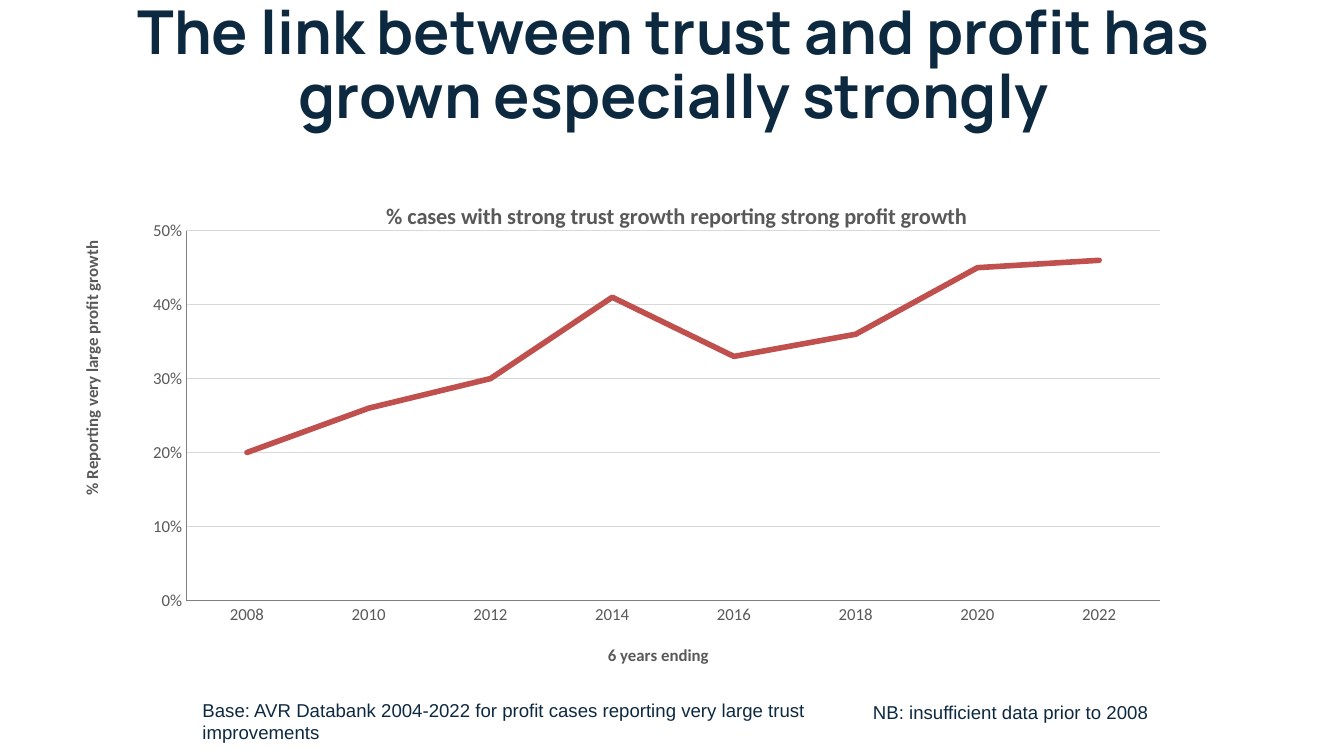
from lxml import etree
from pptx import Presentation
from pptx.chart.data import CategoryChartData
from pptx.dml.color import RGBColor
from pptx.enum.chart import XL_CHART_TYPE, XL_MARKER_STYLE, XL_TICK_MARK
from pptx.enum.text import MSO_ANCHOR, PP_ALIGN
from pptx.oxml.ns import qn
from pptx.util import Inches, Pt

NAVY = RGBColor(0x0D, 0x29, 0x40)
GREY = RGBColor(0x59, 0x59, 0x59)
AXIS_GREY = RGBColor(0x80, 0x80, 0x80)
GRID_GREY = RGBColor(0xD9, 0xD9, 0xD9)
RED = RGBColor(0xC0, 0x50, 0x4D)

CHART_TITLE = "% cases with strong trust growth reporting strong profit growth"
YEARS = [str(year) for year in range(2008, 2023, 2)]
SHARES = [0.2, 0.26, 0.3, 0.41, 0.33, 0.36, 0.45, 0.46]


def style_font(font, size, color, name="Calibri", bold=False):
    font.size = Pt(size)
    font.color.rgb = color
    font.name = name
    font.bold = bold


def add_text(slide, box, text, size, name="Arial", bold=False):
    frame = slide.shapes.add_textbox(*map(Inches, box)).text_frame
    frame.word_wrap = True
    paragraph = frame.paragraphs[0]
    run = paragraph.add_run()
    run.text = text
    style_font(run.font, size, NAVY, name, bold)
    return frame, paragraph


def place(parent, index, **fractions):
    """Give a chart part a fixed place, in fractions of the chart."""
    layout = parent.find(qn("c:layout"))
    if layout is None:
        layout = etree.Element(qn("c:layout"))
        parent.insert(index, layout)
    manual = etree.SubElement(layout, qn("c:manualLayout"))
    if "w" in fractions:
        etree.SubElement(manual, qn("c:layoutTarget")).set("val", "inner")
    for side in "xy":
        etree.SubElement(manual, qn(f"c:{side}Mode")).set("val", "edge")
    for key, value in fractions.items():
        etree.SubElement(manual, qn(f"c:{key}")).set("val", str(value))


def set_title(title, text, size):
    run = title.text_frame.paragraphs[0].add_run()
    run.text = text
    style_font(run.font, size, GREY, bold=True)


def style_axis(axis, title):
    axis.major_tick_mark = axis.minor_tick_mark = XL_TICK_MARK.NONE
    style_font(axis.tick_labels.font, 12, GREY)
    axis.format.line.color.rgb = AXIS_GREY
    axis.format.line.width = Pt(0.75)
    set_title(axis.axis_title, title, 12)


def add_profit_chart(slide):
    data = CategoryChartData(number_format="0%")
    data.categories = YEARS
    data.add_series(CHART_TITLE, SHARES)
    box = map(Inches, (0.67, 1.75, 12, 4.95))
    chart = slide.shapes.add_chart(XL_CHART_TYPE.LINE, *box, data).chart
    chart.has_legend = False
    chart.font.name = "Calibri"
    chart.font.size = Pt(10)
    set_title(chart.chart_title, CHART_TITLE, 16)

    # Axes and gridlines
    style_axis(chart.category_axis, "6 years ending")
    shares_axis = chart.value_axis
    style_axis(shares_axis, "% Reporting very large profit growth")
    shares_axis.minimum_scale, shares_axis.maximum_scale = 0, 0.5
    shares_axis.major_unit = 0.1
    shares_axis.tick_labels.number_format = "0%"
    shares_axis.tick_labels.number_format_is_linked = False
    shares_axis.major_gridlines.format.line.color.rgb = GRID_GREY
    shares_axis.major_gridlines.format.line.width = Pt(0.75)

    # Trend in profit growth
    chart.plots[0].vary_by_categories = False
    trend = chart.plots[0].series[0]
    trend.smooth = False
    trend.marker.style = XL_MARKER_STYLE.NONE
    trend.format.line.color.rgb = RED
    trend.format.line.width = Pt(4)
    line = trend.format.line._get_or_add_ln()
    line.set("cap", "rnd")
    etree.SubElement(line, qn("a:round"))

    # Places of the plot and the titles
    root = chart._chartSpace
    place(root.xpath("c:chart/c:plotArea")[0], 0, x=0.098, y=0.109, w=0.805, h=0.741)
    place(root.xpath("c:chart/c:title")[0], 1, x=0.26, y=0.04)
    place(root.xpath(".//c:catAx/c:title")[0], 1, x=0.444, y=0.93)
    place(root.xpath(".//c:valAx/c:title")[0], 1, x=0.008, y=0.123)


def main():
    deck = Presentation()
    deck.slide_width, deck.slide_height = Inches(13.33), Inches(7.5)
    slide = deck.slides.add_slide(deck.slide_layouts[6])

    # Headline
    frame, headline = add_text(
        slide, (0.68, 0.04, 12, 1.25),
        "The link between trust and profit has grown especially strongly",
        43.2, "Manrope", True)
    frame.vertical_anchor = MSO_ANCHOR.MIDDLE
    headline.alignment = PP_ALIGN.CENTER
    headline.line_spacing = 0.88

    add_profit_chart(slide)

    # Footnotes
    add_text(slide, (1.91, 6.88, 6.5, 0.55),
             "Base: AVR Databank 2004-2022 for profit cases reporting "
             "very large trust improvements", 13.3)
    add_text(slide, (8.56, 6.9, 3.04, 0.33),
             "NB: insufficient data prior to 2008", 13.3)

    deck.save("out.pptx")


if __name__ == "__main__":
    main()
